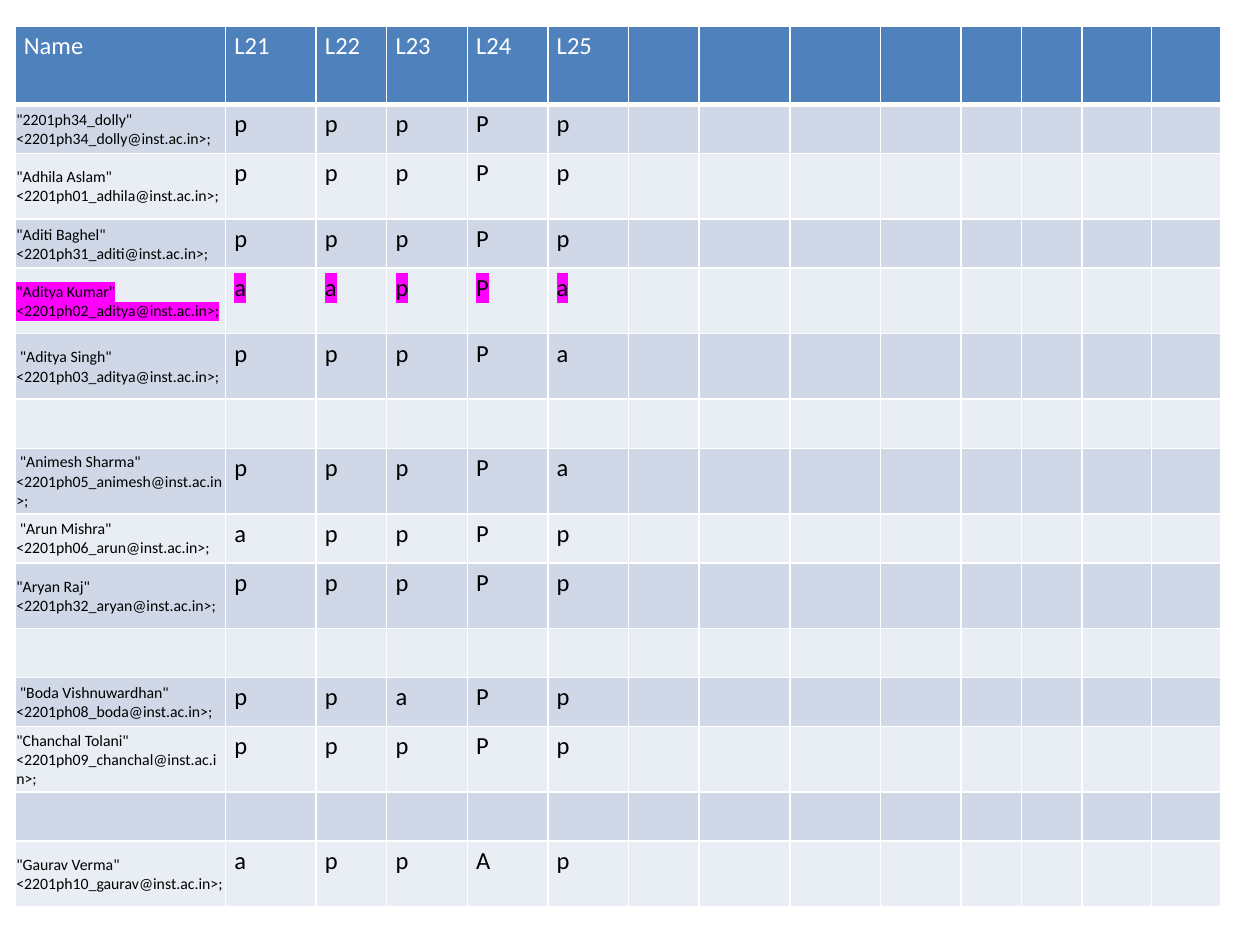
from lxml import etree
from pptx import Presentation
from pptx.dml.color import RGBColor
from pptx.enum.text import MSO_ANCHOR
from pptx.oxml.ns import qn
from pptx.util import Inches, Pt

MIDDLE, TOP = MSO_ANCHOR.MIDDLE, MSO_ANCHOR.TOP
WHITE = RGBColor(0xFF, 0xFF, 0xFF)
BLACK = RGBColor(0x00, 0x00, 0x00)
HEADER_BLUE = RGBColor(0x4F, 0x81, 0xBD)
BANDS = (RGBColor(0xD0, 0xD8, 0xE8), RGBColor(0xE9, 0xED, 0xF4))
MAGENTA = RGBColor(0xFF, 0x00, 0xFF)

FONT = "Calibri"
MAIL_DOMAIN = "inst.ac.in"
HEADINGS = ["Name", "L21", "L22", "L23", "L24", "L25"]
COLUMN_WIDTHS = [1.67, 0.72, 0.56, 0.64, 0.64, 0.64, 0.56,
                 0.72, 0.72, 0.64, 0.48, 0.48, 0.55, 0.55]
HEADER_HEIGHT, TALL, SHORT = 0.62, 0.52, 0.39
HIGHLIGHTED = "2201ph02_aditya"

# Row height, quoted name, mail account, one mark per lecture
STUDENTS = [
    (SHORT, '"2201ph34_dolly"', "2201ph34_dolly", "pppPp"),
    (TALL, '"Adhila Aslam"', "2201ph01_adhila", "pppPp"),
    (SHORT, '"Aditi Baghel"', "2201ph31_aditi", "pppPp"),
    (TALL, '"Aditya Kumar"', HIGHLIGHTED, "aapPa"),
    (TALL, ' "Aditya Singh"', "2201ph03_aditya", "pppPa"),
    (SHORT, "", "", ""),
    (TALL, ' "Animesh Sharma"', "2201ph05_animesh", "pppPa"),
    (SHORT, ' "Arun Mishra"', "2201ph06_arun", "appPp"),
    (TALL, '"Aryan Raj"', "2201ph32_aryan", "pppPp"),
    (SHORT, "", "", ""),
    (SHORT, ' "Boda Vishnuwardhan"', "2201ph08_boda", "ppaPp"),
    (TALL, '"Chanchal Tolani"', "2201ph09_chanchal", "pppPp"),
    (SHORT, "", "", ""),
    (TALL, '"Gaurav Verma"', "2201ph10_gaurav", "appAp"),
]


def add_color(parent, tag, color):
    element = etree.SubElement(parent, qn(tag))
    etree.SubElement(element, qn("a:srgbClr")).set("val", str(color))
    return element


def set_borders(cell, bottom_width):
    properties = cell._tc.get_or_add_tcPr()
    widths = {"a:lnL": 1, "a:lnR": 1, "a:lnT": 1, "a:lnB": bottom_width}
    for index, (tag, width) in enumerate(widths.items()):
        line = etree.Element(qn(tag), w=str(Pt(width)))
        add_color(line, "a:solidFill", WHITE)
        properties.insert(index, line)


def highlight(span):
    """Mark the run's background; the element must follow its text fill."""
    properties = span._r.get_or_add_rPr()
    mark = add_color(properties, "a:highlight", MAGENTA)
    properties.find(qn("a:solidFill")).addnext(mark)


def style_cell(cell, fill, bottom_width=1):
    cell.fill.solid()
    cell.fill.fore_color.rgb = fill
    cell.margin_left = cell.margin_right = Inches(0.07)
    cell.margin_top = cell.margin_bottom = Inches(0.04)
    set_borders(cell, bottom_width)


def write_cell(cell, text, size=14, color=BLACK, marked=False):
    cell.text_frame.text = text
    for span in cell.text_frame.paragraphs[0].runs:
        span.font.name = FONT
        span.font.size = Pt(size)
        span.font.color.rgb = color
        if marked:
            highlight(span)


def write_name(cell, name, account, marked):
    cell.vertical_anchor = MIDDLE
    cell.margin_left = cell.margin_right = cell.margin_top = Inches(0.01)
    cell.margin_bottom = 0
    write_cell(cell, f"{name} <{account}@{MAIL_DOMAIN}>;", 9, BLACK, marked)


def fill_header(table):
    for column in range(len(COLUMN_WIDTHS)):
        style_cell(table.cell(0, column), HEADER_BLUE, 3)
    for column, heading in enumerate(HEADINGS):
        write_cell(table.cell(0, column), heading, color=WHITE)


def fill_student(table, row, name, account, marks):
    for column in range(len(COLUMN_WIDTHS)):
        style_cell(table.cell(row, column), BANDS[(row - 1) % 2])
    marked = account == HIGHLIGHTED
    if name:
        write_name(table.cell(row, 0), name, account, marked)
    for column, mark in enumerate(marks, start=1):
        write_cell(table.cell(row, column), mark, marked=marked)


def add_attendance_table(page):
    heights = [HEADER_HEIGHT] + [student[0] for student in STUDENTS]
    table = page.shapes.add_table(
        len(heights), len(COLUMN_WIDTHS), Inches(0.12), Inches(0.21),
        Inches(sum(COLUMN_WIDTHS)), Inches(sum(heights))).table
    for column, width in zip(table.columns, COLUMN_WIDTHS):
        column.width = Inches(width)
    for row, height in zip(table.rows, heights):
        row.height = Inches(height)
    fill_header(table)
    for row, (_, name, account, marks) in enumerate(STUDENTS, start=1):
        fill_student(table, row, name, account, marks)


def main():
    deck = Presentation()
    deck.slide_width, deck.slide_height = Inches(10), Inches(7.5)
    page = deck.slides.add_slide(deck.slide_layouts[6])
    add_attendance_table(page)
    deck.save("out.pptx")


if __name__ == "__main__":
    main()
